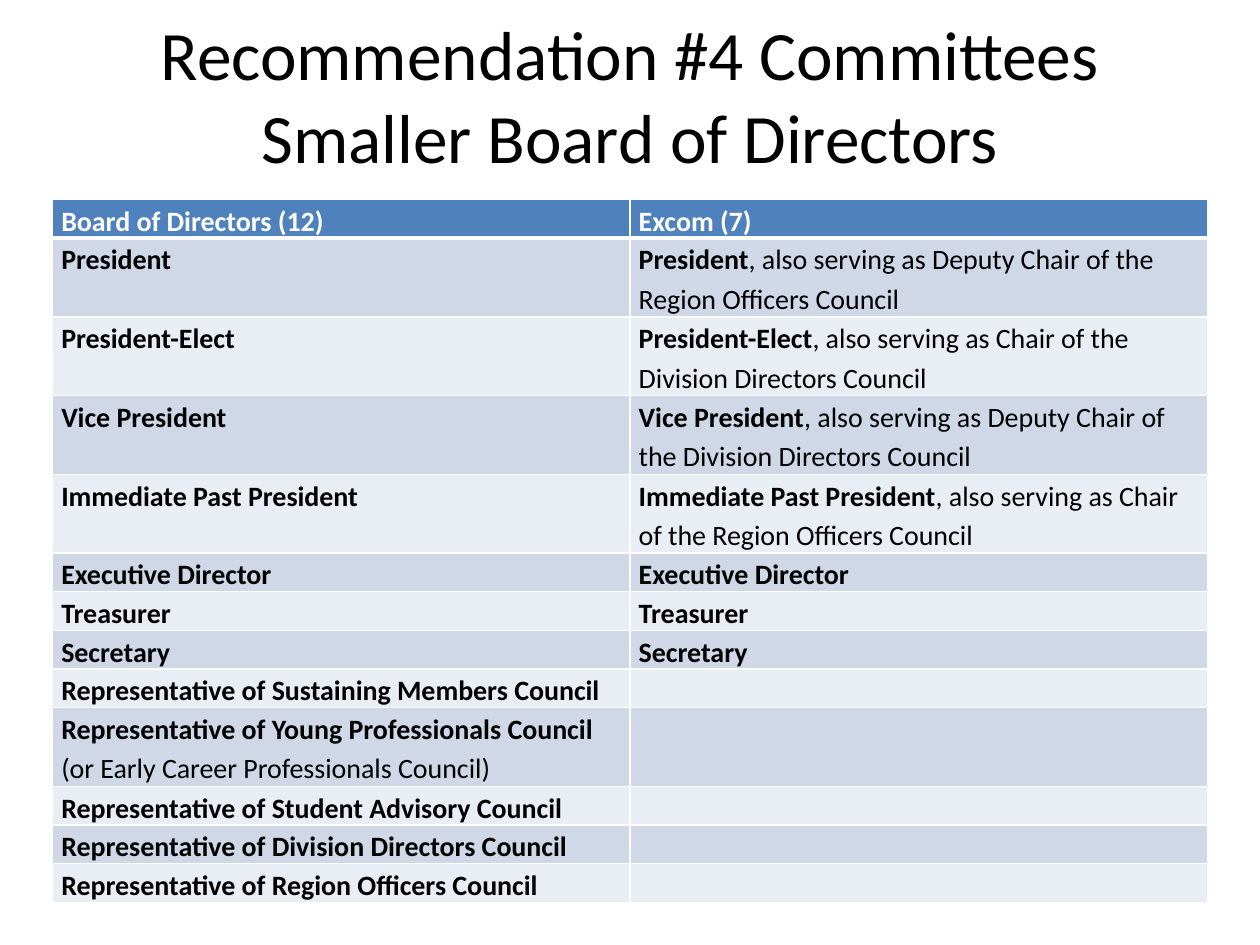
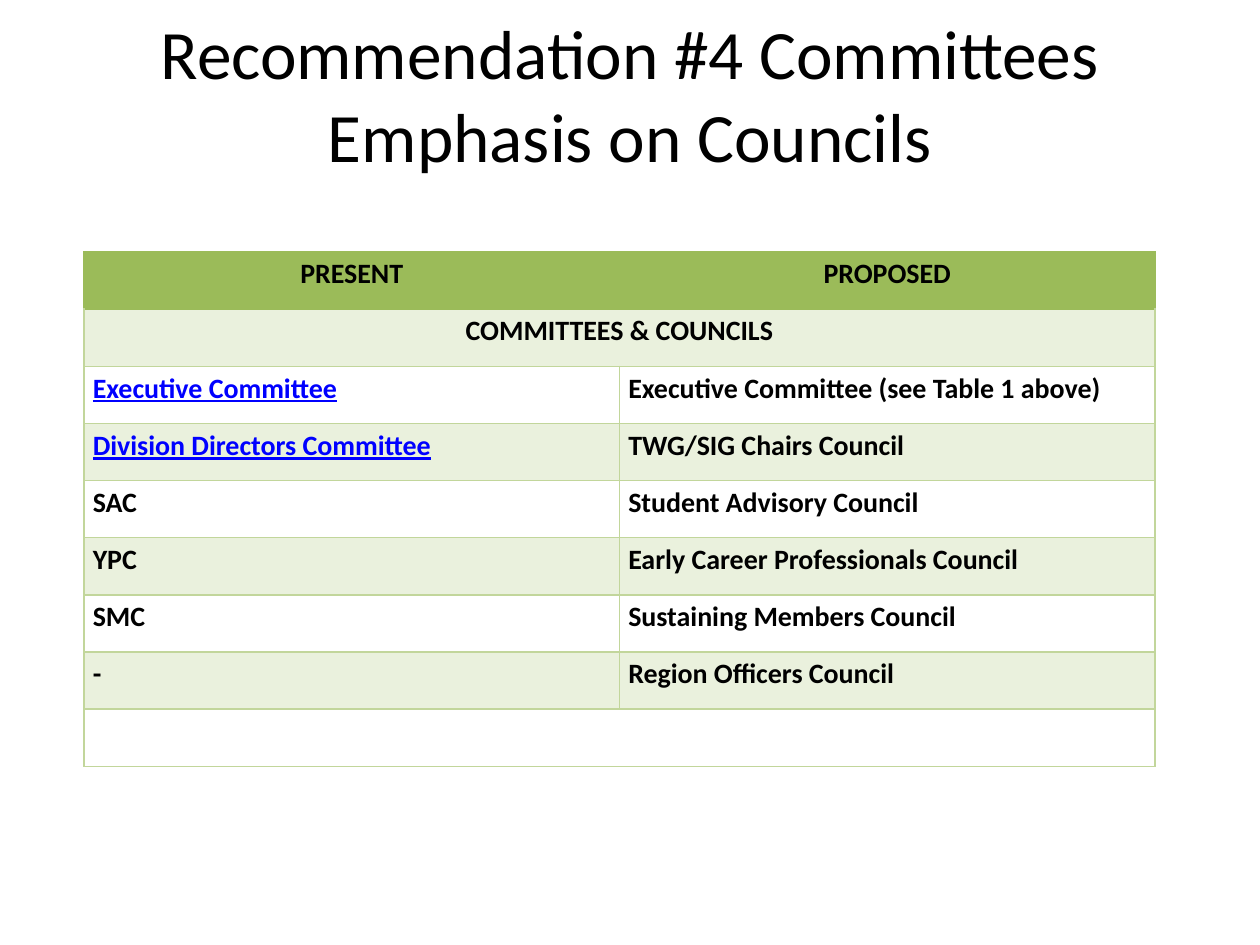
from dataclasses import dataclass
from typing import NamedTuple

from lxml.etree import SubElement
from pptx import Presentation
from pptx.dml.color import RGBColor as Color
from pptx.enum.text import MSO_ANCHOR as Anchor, PP_ALIGN as Align
from pptx.oxml.ns import qn
from pptx.util import Inches, Pt

COLUMN = Inches(10) / 120
ROW = Inches(7.5) / 90
FONT = "Calibri"
COLORS = {
    "text": "000000",
    "white": "FFFFFF",
    "link": "0000FF",
    "blue": "4F81BD",
    "blue_band": "D0D8E8",
    "blue_tint": "E9EDF4",
    "green": "9BBB59",
    "green_line": "C2D69B",
    "green_band": "EAF1DD",
}
TITLE = {"name": FONT, "size": Pt(39.6), "bold": False, "color": "text"}
STRONG = {"name": FONT, "size": Pt(16), "bold": True, "color": "text"}
PLAIN = STRONG | {"bold": False}
LIGHT = STRONG | {"color": "white"}
LINK = STRONG | {"color": "link", "underline": True}
CELL_FORMAT = {
    "margin_left": Inches(0.07),
    "margin_right": Inches(0.07),
    "margin_top": 0,
    "margin_bottom": 0,
    "vertical_anchor": Anchor.TOP,
}


class Run(NamedTuple):
    text: str
    style: dict = STRONG


class Box(NamedTuple):
    left: float
    top: float
    width: float
    height: float

    def lengths(self) -> tuple:
        return (round(self.left * COLUMN), round(self.top * ROW),
                round(self.width * COLUMN), round(self.height * ROW))


class Border(NamedTuple):
    color: str
    points: float = 1


@dataclass
class TableRow:
    cells: tuple
    height: float
    centered: bool = False

    @property
    def merged(self) -> bool:
        return len(self.cells) == 1


@dataclass
class TableLook:
    header_fill: str
    bands: tuple
    line: Border
    header_line: Border
    header_bottom: Border


@dataclass
class TableSlide:
    title: str
    title_box: Box
    table_box: Box
    look: TableLook
    rows: list


def apply_font(font, style: dict) -> None:
    for name, value in style.items():
        if name == "color":
            font.color.rgb = Color.from_string(COLORS[value])
        else:
            setattr(font, name, value)


def write_runs(paragraph, runs: tuple) -> None:
    for text, style in runs:
        run = paragraph.add_run()
        run.text = text
        apply_font(run.font, style)


def draw_title(slide, title: str, box: Box) -> None:
    frame = slide.shapes.add_textbox(*box.lengths()).text_frame
    frame.word_wrap = True
    frame.vertical_anchor = Anchor.MIDDLE
    paragraph = frame.paragraphs[0]
    paragraph.alignment = Align.CENTER
    paragraph.text = title.replace("\n", "\v")
    for run in paragraph.runs:
        apply_font(run.font, TITLE)


def draw_borders(cell, look: TableLook, row_index: int) -> None:
    line = look.header_line if row_index == 0 else look.line
    sides = {
        "L": line,
        "R": line,
        "T": look.header_bottom if row_index == 1 else line,
        "B": look.header_bottom if row_index == 0 else line,
    }
    properties = cell._tc.get_or_add_tcPr()
    for side, border in sides.items():
        edge = SubElement(properties, qn(f"a:ln{side}"), w=str(Pt(border.points)))
        solid = SubElement(edge, qn("a:solidFill"))
        SubElement(solid, qn("a:srgbClr"), val=COLORS[border.color])


def format_cell(cell, look: TableLook, row_index: int) -> None:
    for name, value in CELL_FORMAT.items():
        setattr(cell, name, value)
    draw_borders(cell, look, row_index)
    fill = look.bands[(row_index - 1) % 2] if row_index else look.header_fill
    if fill:
        cell.fill.solid()
        cell.fill.fore_color.rgb = Color.from_string(COLORS[fill])
    else:
        cell.fill.background()


def draw_table(slide, box: Box, look: TableLook, rows: list) -> None:
    table = slide.shapes.add_table(len(rows), 2, *box.lengths()).table
    table.first_row = table.horz_banding = False
    for row_index, row in enumerate(rows):
        table.rows[row_index].height = round(row.height * ROW)
        for cell in table.rows[row_index].cells:
            format_cell(cell, look, row_index)
        if row.merged:
            table.cell(row_index, 0).merge(table.cell(row_index, 1))
        for column_index, runs in enumerate(row.cells):
            if runs:
                paragraph = table.cell(row_index, column_index).text_frame.paragraphs[0]
                paragraph.line_spacing = 1.15
                paragraph.alignment = Align.CENTER if row.centered else Align.LEFT
                write_runs(paragraph, runs)


def board_rows() -> list:
    single, double = 3.6, 7.5
    officers = {
        "President": "Deputy Chair of the Region Officers Council",
        "President-Elect": "Chair of the Division Directors Council",
        "Vice President": "Deputy Chair of the Division Directors Council",
        "Immediate Past President": "Chair of the Region Officers Council",
    }
    members = ("Executive Director", "Treasurer", "Secretary")
    councils = {
        "Sustaining Members Council": "",
        "Young Professionals Council": "(or Early Career Professionals Council)",
        "Student Advisory Council": "",
        "Division Directors Council": "",
        "Region Officers Council": "",
    }
    header = ((Run("Board of Directors (12)", LIGHT),), (Run("Excom (7)", LIGHT),))
    rows = [TableRow(header, single)]
    for office, duty in officers.items():
        excom = (Run(office), Run(f", also serving as {duty}", PLAIN))
        rows.append(TableRow(((Run(office),), excom), double))
    rows += [TableRow(((Run(member),),) * 2, single) for member in members]
    for council, note in councils.items():
        name = f"Representative of {council}"
        runs = (Run(name + " "), Run(note, PLAIN)) if note else (Run(name),)
        rows.append(TableRow((runs, ()), double if note else single))
    return rows


def council_rows() -> list:
    height = 49 / 9
    pairs = (
        (Run("Executive Committee", LINK), Run("Executive Committee (see Table 1 above)")),
        (Run("Division Directors Committee", LINK), Run("TWG/SIG Chairs Council")),
        (Run("SAC"), Run("Student Advisory Council")),
        (Run("YPC"), Run("Early Career Professionals Council")),
        (Run("SMC"), Run("Sustaining Members Council")),
        (Run("-"), Run("Region Officers Council")),
    )
    return [
        TableRow(((Run("PRESENT"),), (Run("PROPOSED"),)), height, centered=True),
        TableRow(((Run("COMMITTEES & COUNCILS"),),), height, centered=True),
        *(TableRow(((present,), (proposed,)), height) for present, proposed in pairs),
        TableRow(((),), height),
    ]


BLUE_LOOK = TableLook("blue", ("blue_band", "blue_tint"),
                      Border("white"), Border("white"), Border("white", 3))
GREEN_LOOK = TableLook("green", ("green_band", None),
                       Border("green_line"), Border("green"), Border("green"))
SLIDES = (
    TableSlide("Recommendation #4 Committees\nSmaller Board of Directors",
               Box(6, 1, 108, 16), Box(5, 19, 110, 67.2), BLUE_LOOK, board_rows()),
    TableSlide("Recommendation #4 Committees\nEmphasis on Councils",
               Box(6, 2, 108, 13.8), Box(8, 24, 102, 49), GREEN_LOOK, council_rows()),
)


def main() -> None:
    presentation = Presentation()
    presentation.slide_width = Inches(10)
    presentation.slide_height = Inches(7.5)
    for content in SLIDES:
        slide = presentation.slides.add_slide(presentation.slide_layouts[6])
        draw_title(slide, content.title, content.title_box)
        draw_table(slide, content.table_box, content.look, content.rows)
    presentation.save("out.pptx")


if __name__ == "__main__":
    main()
